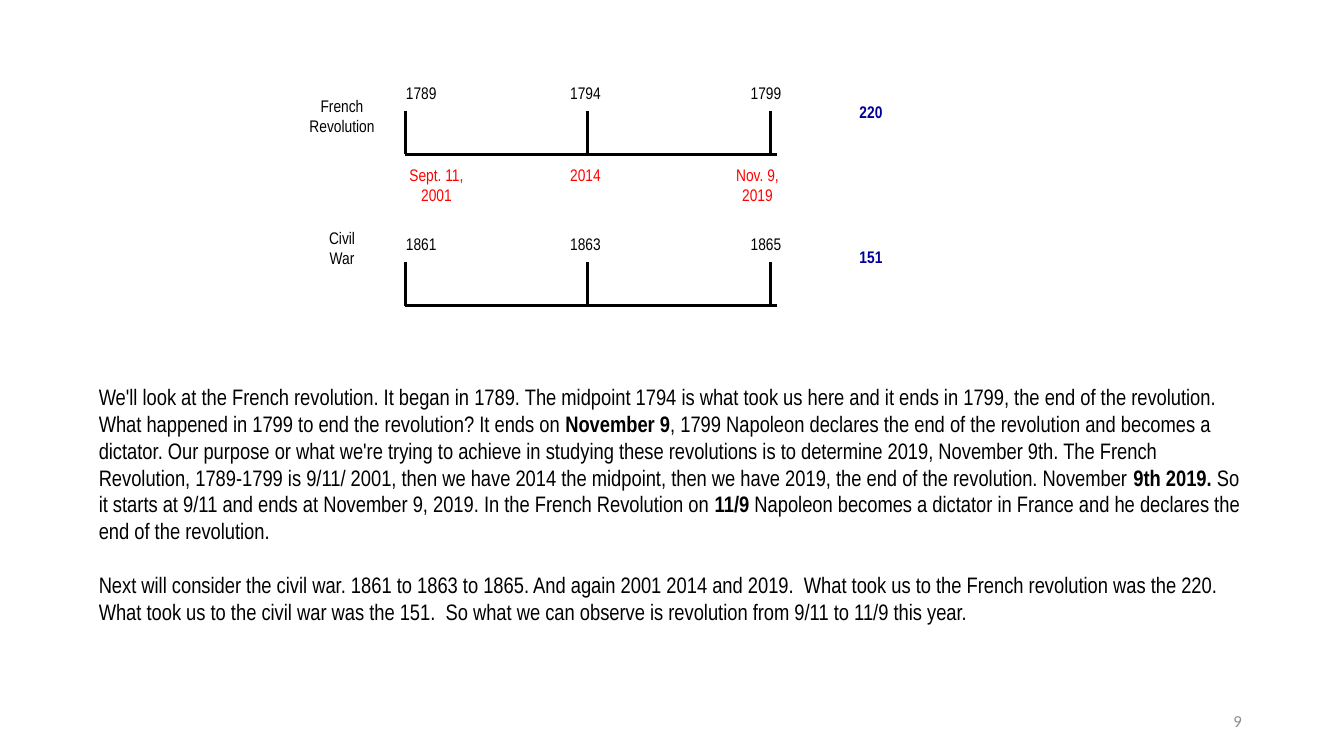
"""Build the slide that sets two revolution timelines above their explanation."""
import pptx
import pptx.dml.color
import pptx.enum.shapes
import pptx.enum.text
import pptx.oxml
import pptx.util

Cm = pptx.util.Cm
Pt = pptx.util.Pt
RGBColor = pptx.dml.color.RGBColor
ALIGN = pptx.enum.text.PP_ALIGN
ANCHOR = pptx.enum.text.MSO_ANCHOR

BLACK = RGBColor(0, 0, 0)
RED = RGBColor(0xFF, 0, 0)
NAVY = RGBColor(0, 0, 0x99)
GRAY = RGBColor(0x8C, 0x8C, 0x8C)
NARROW = "Arial Narrow"

TIMELINES = [
    {"name": "French\nRevolution", "name_top": 2.31, "years": ["1789", "1794", "1799"],
     "count": "220", "count_top": 2.46},
    {"name": "Civil\nWar", "name_top": 5.64, "years": ["1861", "1863", "1865"],
     "count": "151", "count_top": 6.12},
]
MODERN_DATES = [
    ("Sept. 11,\n2001", 9.88, 2.24),
    ("2014", 14.02, 1.47),
    ("Nov. 9,\n2019", 18.14, 1.9),
]
EXPLANATION = [
    [
        ("We'll look at the French revolution. It began in 1789. The midpoint 1794 is what took us "
         "here and it ends in 1799, the end of the revolution. What happened in 1799 to end the "
         "revolution? It ends on ", False),
        ("November 9", True),
        (", 1799 Napoleon declares the end of the revolution and becomes a dictator. Our purpose or "
         "what we're trying to achieve in studying these revolutions is to determine 2019, November "
         "9th. The French Revolution, 1789-1799 is 9/11/ 2001, then we have 2014 the midpoint, then "
         "we have 2019, the end of the revolution. November ", False),
        ("9th 2019.", True),
        (" So it starts at 9/11 and ends at November 9, 2019. In the French Revolution on ", False),
        ("11/9 ", True),
        ("Napoleon becomes a dictator in France and he declares the end of the revolution.", False),
    ],
    [
        ("Next will consider the civil war. 1861 to 1863 to 1865. And again 2001 2014 and 2019.  What "
         "took us to the French revolution was the 220. What took us to the civil war was the 151.  So "
         "what we can observe is revolution from 9/11 to 11/9 this year.", False),
    ],
]
PAGE_NUMBER = "9"

AXIS_LEFT, AXIS_RIGHT, AXIS_TOP = 10.21, 19.58, 3.89
TICK_STEP, TICK_HEIGHT = 4.6, 1.1
TIMELINE_STEP = 3.81
YEAR_LEFTS = [9.88, 14.02, 18.57]
YEAR_TOP = 1.98


def style(span, size, color, bold=False, font=NARROW):
    span.font.name = font
    span.font.size = Pt(size)
    span.font.bold = bold
    span.font.color.rgb = color


def add_box(page, left, top, width, height):
    box = page.shapes.add_textbox(Cm(left), Cm(top), Cm(width), Cm(height))
    box.text_frame.word_wrap = True
    return box


def add_label(page, text, left, top, width, height, color=BLACK, bold=False):
    frame = add_box(page, left, top, width, height).text_frame
    frame.margin_left = frame.margin_right = Cm(0.1)
    frame.margin_top = frame.margin_bottom = Cm(0.1)
    frame.text = text
    for para in frame.paragraphs:
        para.alignment = ALIGN.CENTER
        for span in para.runs:
            style(span, 12, color, bold)


def add_line(page, left, top, right, bottom):
    line = page.shapes.add_connector(
        pptx.enum.shapes.MSO_CONNECTOR.STRAIGHT, Cm(left), Cm(top), Cm(right), Cm(bottom))
    line.line.color.rgb = BLACK
    line.line.width = Pt(2)
    properties = line._element.spPr
    properties.append(pptx.oxml.parse_xml(
        '<a:effectLst xmlns:a="http://schemas.openxmlformats.org/drawingml/2006/main"/>'))


def add_timeline(page, timeline, offset):
    axis = AXIS_TOP + offset
    add_line(page, AXIS_LEFT, axis, AXIS_RIGHT, axis)
    for index, (year, left) in enumerate(zip(timeline["years"], YEAR_LEFTS)):
        tick = AXIS_LEFT + index * TICK_STEP
        add_line(page, tick, axis - TICK_HEIGHT, tick, axis)
        add_label(page, year, left, YEAR_TOP + offset, 1.47, 0.61)
    add_label(page, timeline["name"], 7.67, timeline["name_top"], 1.9, 1.9)
    add_label(page, timeline["count"], 21, timeline["count_top"], 1.9, 1.27, NAVY, True)


def add_explanation(page):
    frame = add_box(page, 2.24, 9.53, 29.31, 7.19).text_frame
    for index, pieces in enumerate(EXPLANATION):
        para = frame.add_paragraph() if index else frame.paragraphs[0]
        para.space_before = Pt(19.2 if index else 0)
        for text, bold in pieces:
            span = para.add_run()
            span.text = text
            style(span, 16, BLACK, bold)


def add_page_number(page):
    frame = add_box(page, 23.93, 17.65, 7.62, 1.02).text_frame
    frame.vertical_anchor = ANCHOR.MIDDLE
    frame.text = PAGE_NUMBER
    para = frame.paragraphs[0]
    para.alignment = ALIGN.RIGHT
    style(para.runs[0], 12, GRAY, font="Calibri")


def main():
    deck = pptx.Presentation()
    deck.slide_width, deck.slide_height = Cm(33.87), Cm(19.05)
    page = deck.slides.add_slide(deck.slide_layouts[6])
    for index, timeline in enumerate(TIMELINES):
        add_timeline(page, timeline, index * TIMELINE_STEP)
    for text, left, width in MODERN_DATES:
        add_label(page, text, left, 4.06, width, 1.27, RED)
    add_explanation(page)
    add_page_number(page)
    deck.save("out.pptx")


if __name__ == "__main__":
    main()
